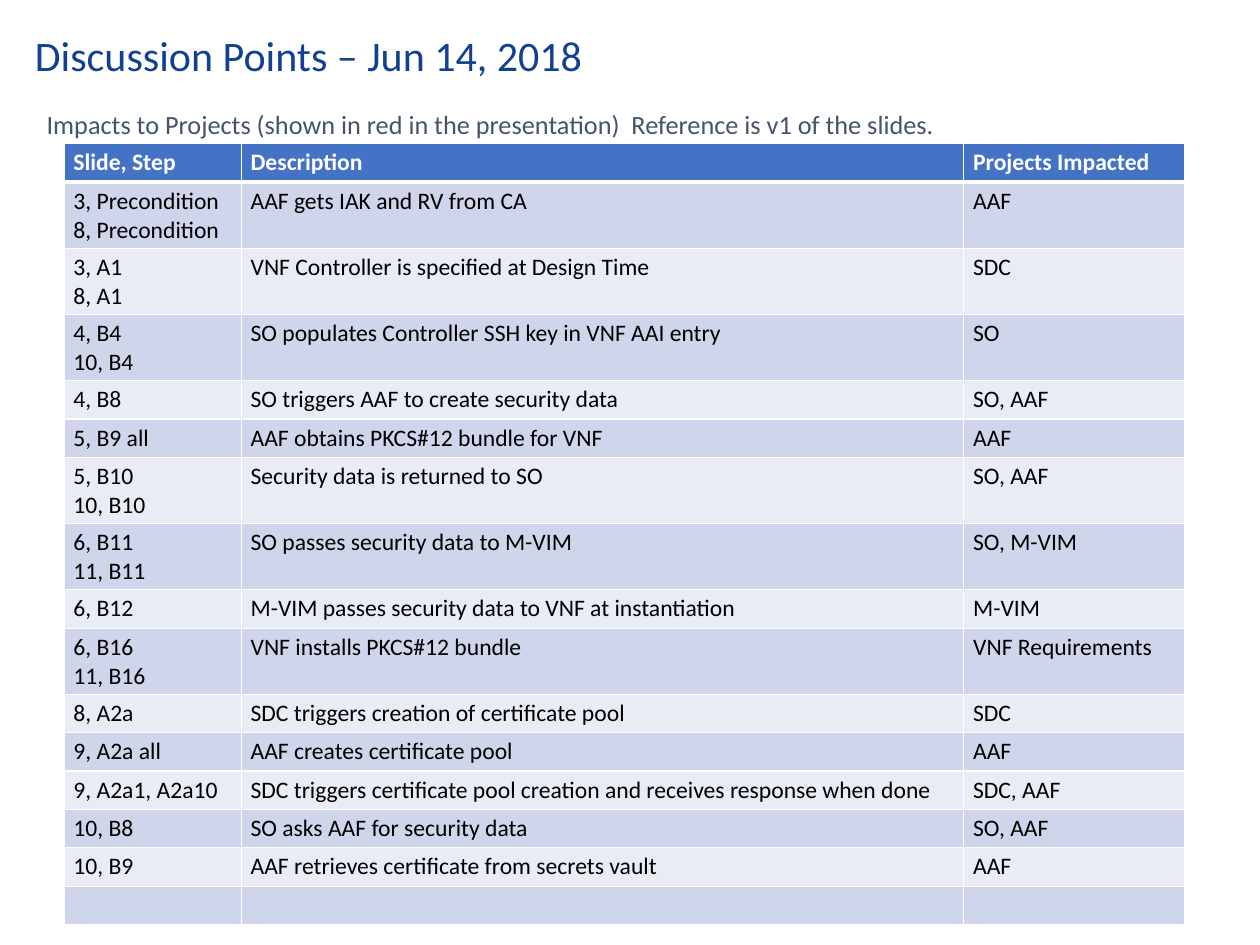
from lxml import etree
from pptx import Presentation
from pptx.dml.color import RGBColor
from pptx.enum.text import MSO_ANCHOR
from pptx.oxml.ns import qn
from pptx.util import Pt

PX = 9525  # EMU per px, 96 px to the inch
TOP = MSO_ANCHOR.TOP
FONT = "Calibri"
COLORS = {
    "title": "124191", "subtitle": "44546A", "header": "4472C4",
    "band_dark": "CFD5EA", "band_light": "E9EBF5",
    "white": "FFFFFF", "black": "000000",
}
COL_WIDTHS = [180, 734, 224]
ROW_H, TWO_LINE_ROW_H = 39, 67
HEADER = ("Slide, Step", "Description", "Projects Impacted")
IMPACTS = [
    ("3, Precondition\n8, Precondition", "AAF gets IAK and RV from CA", "AAF"),
    ("3, A1\n8, A1", "VNF Controller is specified at Design Time", "SDC"),
    ("4, B4\n10, B4", "SO populates Controller SSH key in VNF AAI entry", "SO"),
    ("4, B8", "SO triggers AAF to create security data", "SO, AAF"),
    ("5, B9 all", "AAF obtains PKCS#12 bundle for VNF", "AAF"),
    ("5, B10\n10, B10", "Security data is returned to SO", "SO, AAF"),
    ("6, B11\n11, B11", "SO passes security data to M-VIM", "SO, M-VIM"),
    ("6, B12", "M-VIM passes security data to VNF at instantiation", "M-VIM"),
    ("6, B16\n11, B16", "VNF installs PKCS#12 bundle", "VNF Requirements"),
    ("8, A2a", "SDC triggers creation of certificate pool", "SDC"),
    ("9, A2a all", "AAF creates certificate pool", "AAF"),
    ("9, A2a1, A2a10",
     "SDC triggers certificate pool creation and receives response when done",
     "SDC, AAF"),
    ("10, B8", "SO asks AAF for security data", "SO, AAF"),
    ("10, B9", "AAF retrieves certificate from secrets vault", "AAF"),
    ("", "", ""),
]


def rgb(name):
    return RGBColor.from_string(COLORS[name])


def format_runs(tf, size, color, bold=False):
    for p in tf.paragraphs:
        for r in p.runs:
            r.font.name = FONT
            r.font.size = Pt(size)
            r.font.bold = bold
            r.font.color.rgb = rgb(color)


def add_heading(s, box, text, size, color, line_spacing=1.0):
    tf = s.shapes.add_textbox(*(v * PX for v in box)).text_frame
    tf.word_wrap = True
    tf.vertical_anchor = TOP
    tf.text = text
    p = tf.paragraphs[0]
    p.line_spacing = line_spacing
    p.space_after = Pt(8)
    format_runs(tf, size, color)


def set_borders(cell, widths):
    # Borders must come before the fill in the cell properties
    tc_pr = cell._tc.get_or_add_tcPr()
    for i, (side, width) in enumerate(widths.items()):
        ln = etree.Element(qn("a:" + side), w=str(Pt(width)))
        fill = etree.SubElement(ln, qn("a:solidFill"))
        etree.SubElement(fill, qn("a:srgbClr"), val=COLORS["white"])
        tc_pr.insert(i, ln)


def add_impact_table(s, left, top):
    rows = [HEADER] + IMPACTS
    heights = [TWO_LINE_ROW_H if "\n" in row[0] else ROW_H for row in rows]
    box = (left, top, sum(COL_WIDTHS), sum(heights))
    table = s.shapes.add_table(len(rows), len(COL_WIDTHS),
                               *(v * PX for v in box)).table
    for column, width in zip(table.columns, COL_WIDTHS):
        column.width = width * PX

    for i, (row, height) in enumerate(zip(rows, heights)):
        table.rows[i].height = height * PX
        is_header = i == 0
        band = "band_dark" if i % 2 else "band_light"
        borders = {"lnL": 1, "lnR": 1, "lnT": 3 if i == 1 else 1,
                   "lnB": 3 if is_header else 1}
        for j, text in enumerate(row):
            cell = table.cell(i, j)
            cell.text_frame.text = text
            format_runs(cell.text_frame, 18,
                        "white" if is_header else "black", is_header)
            cell.fill.solid()
            cell.fill.fore_color.rgb = rgb("header" if is_header else band)
            set_borders(cell, borders)


def main():
    prs = Presentation()
    prs.slide_width, prs.slide_height = 1280 * PX, 960 * PX
    s = prs.slides.add_slide(prs.slide_layouts[6])

    # Title and subtitle
    add_heading(s, (26, 31, 1178, 73), "Discussion Points – Jun 14, 2018",
                32, "title", 0.9)
    add_heading(s, (38, 105, 1191, 42),
                "Impacts to Projects (shown in red in the presentation)  "
                "Reference is v1 of the slides.", 20, "subtitle")

    # Impacts by slide and step
    add_impact_table(s, 65, 146)

    prs.save("out.pptx")


if __name__ == "__main__":
    main()
